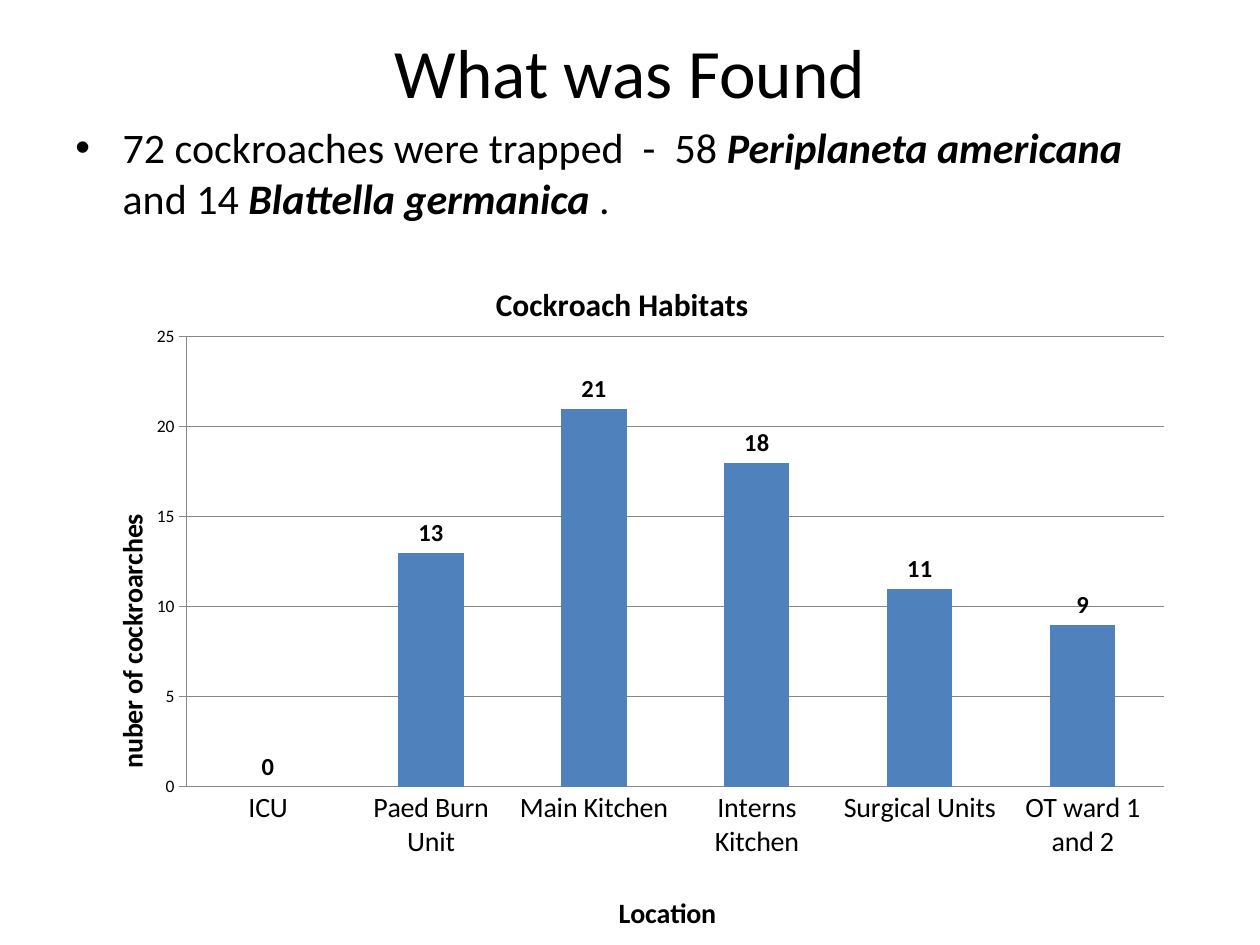
from dataclasses import dataclass

from lxml import etree
from pptx import Presentation
from pptx.chart.data import CategoryChartData
from pptx.dml.color import RGBColor
from pptx.enum.chart import XL_CHART_TYPE, XL_LABEL_POSITION, XL_TICK_MARK
from pptx.enum.text import MSO_ANCHOR, MSO_AUTO_SIZE, PP_ALIGN
from pptx.oxml.ns import qn
from pptx.util import Pt

COLUMN_CLUSTERED = XL_CHART_TYPE.COLUMN_CLUSTERED
OUTSIDE_END = XL_LABEL_POSITION.OUTSIDE_END
TICK_NONE = XL_TICK_MARK.NONE
TICK_OUTSIDE = XL_TICK_MARK.OUTSIDE
MIDDLE = MSO_ANCHOR.MIDDLE
TOP = MSO_ANCHOR.TOP
NO_AUTO_SIZE = MSO_AUTO_SIZE.NONE
CENTER = PP_ALIGN.CENTER

BLACK = RGBColor(0x00, 0x00, 0x00)
BLUE = RGBColor(0x4F, 0x81, 0xBD)
GRAY = RGBColor(0x87, 0x87, 0x87)
FONT = "Calibri"


@dataclass(frozen=True)
class Phrase:
    text: str
    emphasis: bool = False


@dataclass(frozen=True)
class ChartHeading:
    text: str
    size: float
    left: float
    top: float


@dataclass(frozen=True)
class Habitat:
    location: str
    count: int


FINDINGS = (
    Phrase("72 cockroaches were trapped  -  58 "),
    Phrase("Periplaneta americana ", True),
    Phrase("and 14 "),
    Phrase("Blattella germanica ", True),
    Phrase("."),
)
HABITATS = (
    Habitat("ICU", 0),
    Habitat("Paed Burn Unit", 13),
    Habitat("Main Kitchen", 21),
    Habitat("Interns Kitchen", 18),
    Habitat("Surgical Units", 11),
    Habitat("OT ward 1 and 2", 9),
)
CHART_HEADING = ChartHeading("Cockroach Habitats", 18, 0.38, 0.05)
LOCATION_HEADING = ChartHeading("Location", 16, 0.49, 0.92)
COUNT_HEADING = ChartHeading("nuber of cockroarches", 16, 0.04, 0.38)


def style_font(font, size: float, bold: bool = False) -> None:
    font.name = FONT
    font.size = Pt(size)
    font.bold = bold
    font.color.rgb = BLACK


def make_layout(**settings) -> etree._Element:
    layout = etree.Element(qn("c:layout"))
    manual = etree.SubElement(layout, qn("c:manualLayout"))
    for name, value in settings.items():
        etree.SubElement(manual, qn(f"c:{name}")).set("val", str(value))
    return layout


def remove_layout(element) -> None:
    for layout in element.findall(qn("c:layout")):
        element.remove(layout)


def set_heading(owner, heading: ChartHeading) -> None:
    title = owner.chart_title if hasattr(owner, "chart_title") else owner.axis_title
    paragraph = title.text_frame.paragraphs[0]
    paragraph.text = heading.text
    style_font(paragraph.font, heading.size, True)
    element = title._element
    remove_layout(element)
    element.find(qn("c:tx")).addnext(
        make_layout(xMode="edge", yMode="edge", x=heading.left, y=heading.top)
    )


def add_title(slide) -> None:
    title = slide.shapes.title
    title.left, title.top, title.width, title.height = Pt(36), Pt(21.6), Pt(648), Pt(38)
    frame = title.text_frame
    frame.auto_size = NO_AUTO_SIZE
    frame.vertical_anchor = MIDDLE
    paragraph = frame.paragraphs[0]
    paragraph.text = "What was Found"
    paragraph.alignment = CENTER
    style_font(paragraph.font, 39.6)


def add_findings(slide, phrases: tuple[Phrase, ...]) -> None:
    box = slide.shapes.add_textbox(Pt(36), Pt(66), Pt(648), Pt(72))
    frame = box.text_frame
    frame.word_wrap = True
    frame.vertical_anchor = TOP
    paragraph = frame.paragraphs[0]
    paragraph.space_before = Pt(4.8)
    style_font(paragraph.font, 24)
    for phrase in phrases:
        run = paragraph.add_run()
        run.text = phrase.text
        style_font(run.font, 24, phrase.emphasis)
        run.font.italic = phrase.emphasis
    properties = paragraph._p.get_or_add_pPr()
    properties.set("marL", str(Pt(27)))
    properties.set("indent", str(-Pt(27)))
    bullet = etree.Element(qn("a:buChar"), char="•")
    properties.find(qn("a:spcBef")).addnext(bullet)
    bullet.addprevious(etree.Element(qn("a:buFont"), typeface="Arial"))


def add_habitat_chart(slide, habitats: tuple[Habitat, ...]) -> None:
    data = CategoryChartData()
    data.categories = [habitat.location for habitat in habitats]
    data.add_series("Series 1", [habitat.count for habitat in habitats])
    chart = slide.shapes.add_chart(
        COLUMN_CLUSTERED, Pt(36), Pt(138.2), Pt(642.2), Pt(401.8), data
    ).chart
    chart.has_legend = False
    style_font(chart.font, 10)
    set_heading(chart, CHART_HEADING)

    category_axis = chart.category_axis
    category_axis.major_tick_mark = TICK_NONE
    style_font(category_axis.tick_labels.font, 16)
    set_heading(category_axis, LOCATION_HEADING)

    value_axis = chart.value_axis
    value_axis.minimum_scale, value_axis.maximum_scale, value_axis.major_unit = 0, 25, 5
    value_axis.major_tick_mark = TICK_OUTSIDE
    style_font(value_axis.tick_labels.font, 10)
    set_heading(value_axis, COUNT_HEADING)

    for lined in (category_axis, value_axis, value_axis.major_gridlines):
        lined.format.line.color.rgb = GRAY
        lined.format.line.width = Pt(0.75)

    plot = chart.plots[0]
    plot.gap_width = 150
    plot.vary_by_categories = False
    fill = plot.series[0].format.fill
    fill.solid()
    fill.fore_color.rgb = BLUE
    plot.has_data_labels = True
    labels = plot.data_labels
    labels.show_value = True
    labels.position = OUTSIDE_END
    style_font(labels.font, 14, True)

    plot_area = chart._chartSpace.chart.plotArea
    remove_layout(plot_area)
    plot_area.insert(0, make_layout(
        layoutTarget="inner", xMode="edge", yMode="edge", x=0.11, y=0.135, w=0.87, h=0.64
    ))


def main() -> None:
    presentation = Presentation()
    presentation.slide_width, presentation.slide_height = Pt(720), Pt(540)
    slide = presentation.slides.add_slide(presentation.slide_layouts.get_by_name("Title Only"))
    add_title(slide)
    add_findings(slide, FINDINGS)
    add_habitat_chart(slide, HABITATS)
    presentation.save("out.pptx")


if __name__ == "__main__":
    main()
